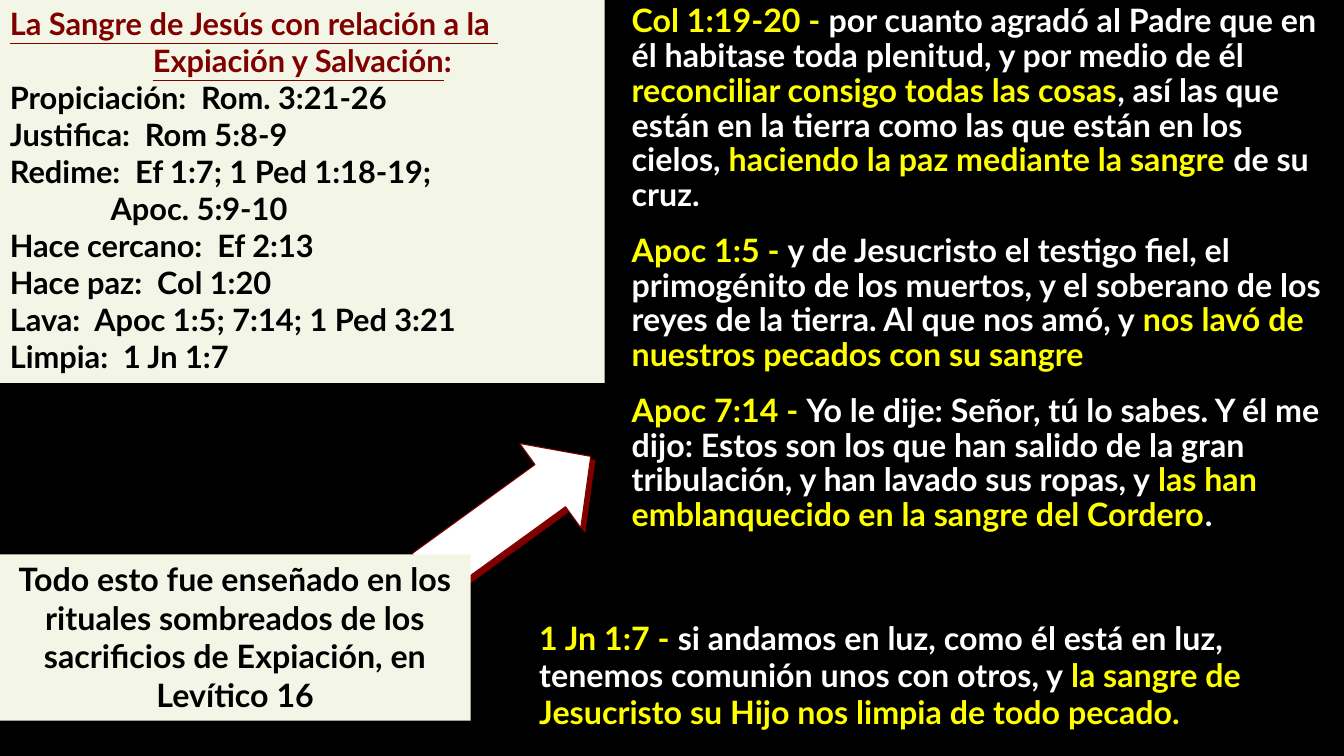
import lxml.etree
import pptx
import pptx.dml.color
import pptx.enum.shapes
import pptx.enum.text
import pptx.oxml.ns
import pptx.util
from pptx.util import Cm

BLACK = pptx.dml.color.RGBColor(0x00, 0x00, 0x00)
WHITE = pptx.dml.color.RGBColor(0xFF, 0xFF, 0xFF)
YELLOW = pptx.dml.color.RGBColor(0xFF, 0xFF, 0x00)
MAROON = pptx.dml.color.RGBColor(0x80, 0x00, 0x00)
CREAM = pptx.dml.color.RGBColor(0xF3, 0xF6, 0xE6)

FONT = "Lato"
LEFT = pptx.enum.text.PP_ALIGN.LEFT
CENTER = pptx.enum.text.PP_ALIGN.CENTER

REVELATION_VERSES = [
    [("Col 1:19-20 - ", YELLOW),
     ("por cuanto agradó al Padre que en él habitase toda plenitud, y por medio de él ", WHITE),
     ("reconciliar consigo todas las cosas", YELLOW),
     (", así las que están en la tierra como las que están en los cielos, ", WHITE),
     ("haciendo la paz mediante la sangre ", YELLOW),
     ("de su cruz.", WHITE)],
    [("Apoc 1:5 - ", YELLOW),
     ("y de Jesucristo el testigo fiel, el primogénito de los muertos, y el soberano "
      "de los reyes de la tierra. Al que nos amó, y ", WHITE),
     ("nos lavó de nuestros pecados con su sangre", YELLOW)],
    [("Apoc 7:14 - ", YELLOW),
     ("Yo le dije: Señor, tú lo sabes. Y él me dijo: Estos son los que han salido de "
      "la gran tribulación, y han lavado sus ropas, y ", WHITE),
     ("las han emblanquecido en la sangre del Cordero", YELLOW),
     (".", WHITE)],
]
JOHN_VERSE = [
    ("1 Jn 1:7 - ", YELLOW),
    ("si andamos en luz, como él está en luz, tenemos comunión unos con otros, y ", WHITE),
    ("la sangre de Jesucristo su Hijo nos limpia de todo pecado.", YELLOW),
]
RITUALS = ("Todo esto fue enseñado en los rituales sombreados de los sacrificios de "
           "Expiación, en Levítico 16")
REFERENCES = [
    "Propiciación:  Rom. 3:21-26",
    "Justifica:  Rom 5:8-9",
    "Redime:  Ef 1:7; 1 Ped 1:18-19;",
    "Apoc. 5:9-10",
    "Hace cercano:  Ef 2:13",
    "Hace paz:  Col 1:20",
    "Lava:  Apoc 1:5; 7:14; 1 Ped 3:21",
    "Limpia:  1 Jn 1:7",
]
INDENTED_REFERENCE = "Apoc. 5:9-10"


def add_run(paragraph, text, color, size, underline=False):
    run = paragraph.add_run()
    run.text = text
    run.font.name = FONT
    run.font.size = pptx.util.Pt(size)
    run.font.bold = True
    run.font.underline = underline
    run.font.color.rgb = color


def next_paragraph(text_frame, alignment=LEFT):
    """Return the still empty first paragraph, or a new one."""
    paragraph = text_frame.paragraphs[0]
    if paragraph.runs:
        paragraph = text_frame.add_paragraph()
    paragraph.alignment = alignment
    return paragraph


def add_verses(slide, left, top, width, height, verses, line_spacing):
    text_frame = slide.shapes.add_textbox(left, top, width, height).text_frame
    text_frame.word_wrap = True
    for index, verse in enumerate(verses):
        paragraph = next_paragraph(text_frame)
        paragraph.line_spacing = line_spacing
        paragraph.space_before = pptx.util.Pt(15 if index else 0)
        for text, color in verse:
            add_run(paragraph, text, color, 23)


def add_panel(slide, left, top, width, height):
    """Add a cream rectangle and return its text frame."""
    panel = slide.shapes.add_shape(
        pptx.enum.shapes.MSO_SHAPE.RECTANGLE, left, top, width, height)
    panel.shadow.inherit = False
    panel.fill.solid()
    panel.fill.fore_color.rgb = CREAM
    panel.line.fill.background()
    text_frame = panel.text_frame
    text_frame.word_wrap = True
    text_frame.vertical_anchor = pptx.enum.text.MSO_ANCHOR.TOP
    return text_frame


def add_hard_shadow(shape, color, distance, angle):
    shape.shadow.inherit = False
    qn = pptx.oxml.ns.qn
    effects = shape.element.spPr.find(qn("a:effectLst"))
    shadow = lxml.etree.SubElement(
        effects, qn("a:outerShdw"), blurRad="0", dist=str(pptx.util.Pt(distance)),
        dir=str(angle * 60000), algn="ctr", rotWithShape="0")
    lxml.etree.SubElement(shadow, qn("a:srgbClr"), val=str(color))


def add_arrow(slide, left, top, width, height, rotation):
    arrow = slide.shapes.add_shape(
        pptx.enum.shapes.MSO_SHAPE.RIGHT_ARROW, left, top, width, height)
    arrow.adjustments[1] = 0.48
    arrow.rotation = rotation
    arrow.fill.solid()
    arrow.fill.fore_color.rgb = WHITE
    arrow.line.color.rgb = MAROON
    arrow.line.width = pptx.util.Pt(0.75)
    add_hard_shadow(arrow, MAROON, 4.2, 45)


def add_references(text_frame):
    title = next_paragraph(text_frame)
    add_run(title, "La Sangre de Jesús con relación a la ", MAROON, 22, underline=True)
    subtitle = next_paragraph(text_frame, CENTER)
    add_run(subtitle, "Expiación y Salvación", MAROON, 22, underline=True)
    add_run(subtitle, ":", MAROON, 22)
    for reference in REFERENCES:
        paragraph = next_paragraph(text_frame)
        if reference == INDENTED_REFERENCE:
            paragraph._p.get_or_add_pPr().set("marL", str(Cm(2.54)))
        add_run(paragraph, reference, BLACK, 22)


def main():
    presentation = pptx.Presentation()
    presentation.slide_width = Cm(33.87)
    presentation.slide_height = Cm(19.05)
    slide = presentation.slides.add_slide(presentation.slide_layouts[6])
    slide.background.fill.solid()
    slide.background.fill.fore_color.rgb = BLACK

    add_arrow(slide, Cm(10.29), Cm(11.68), Cm(5.08), Cm(2.62), 324.1)
    add_verses(slide, Cm(15.67), Cm(0), Cm(18.2), Cm(15.49), REVELATION_VERSES, 0.9)
    add_verses(slide, Cm(13.34), Cm(15.54), Cm(20.52), Cm(3.05), [JOHN_VERSE], 0.95)

    rituals_frame = add_panel(slide, Cm(0), Cm(13.97), Cm(11.86), Cm(4.19))
    add_run(next_paragraph(rituals_frame, CENTER), RITUALS, BLACK, 23)
    add_references(add_panel(slide, Cm(0), Cm(0), Cm(15.24), Cm(9.65)))

    presentation.save("out.pptx")


if __name__ == "__main__":
    main()
